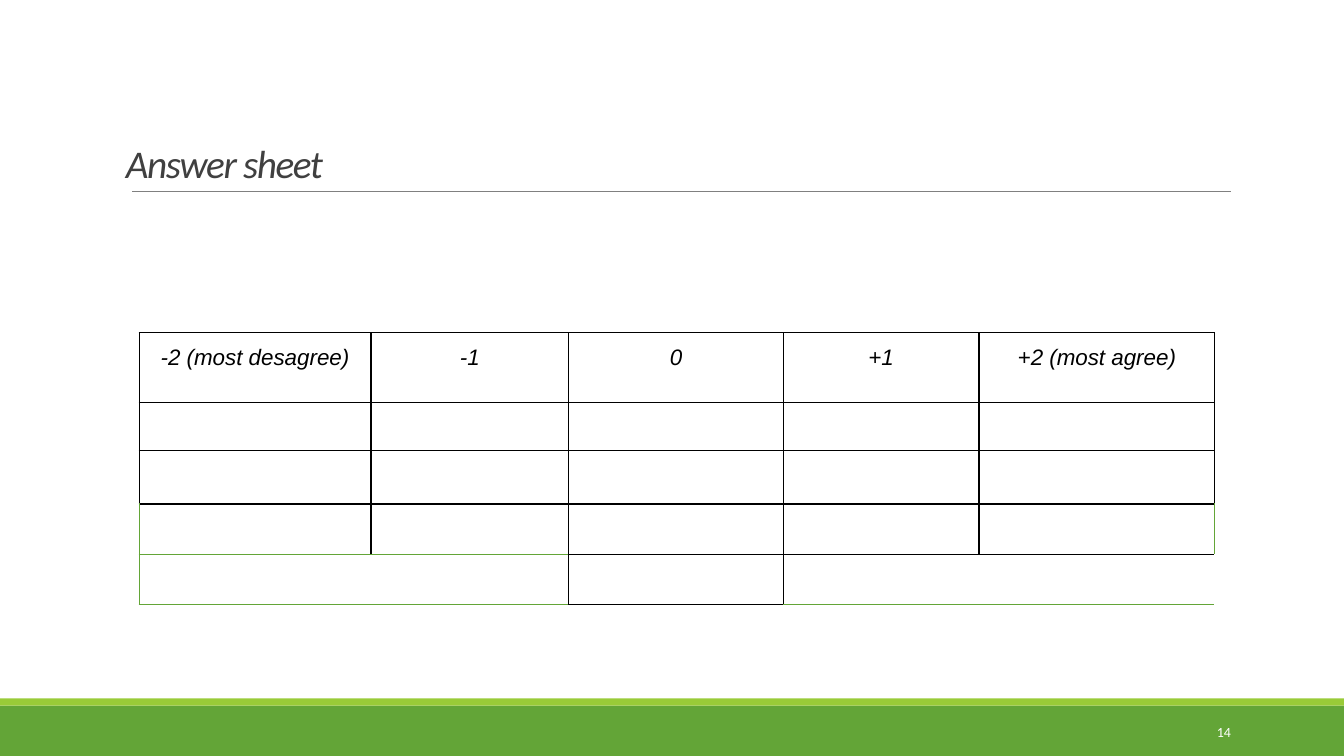
from lxml.etree import SubElement
from pptx import Presentation
from pptx.dml.color import RGBColor
from pptx.enum.shapes import MSO_CONNECTOR, MSO_SHAPE
from pptx.enum.text import MSO_ANCHOR, PP_ALIGN
from pptx.oxml.ns import qn
from pptx.util import Inches, Pt

TITLE = "Answer sheet"
PAGE = "14"
SCALE = ["-2 (most desagree)", "-1", "0", "+1", "+2 (most agree)"]
COL_WIDTHS = [2.3, 1.96, 2.13, 1.94, 2.34]
ROW_HEIGHTS = [0.69, 0.48, 0.53, 0.5, 0.5]
MERGES = [(0, 1), (3, 4)]  # column pairs joined in the last row

WIDTH, HEIGHT = 13.33, 7.5
BAND, STRIPE = 0.5, 0.07
GREEN = RGBColor(0x63, 0xA5, 0x37)
LIME = RGBColor(0x99, 0xCB, 0x38)
GREY = RGBColor(0x80, 0x80, 0x80)
DARK = RGBColor(0x40, 0x40, 0x40)
BLACK = RGBColor(0, 0, 0)
WHITE = RGBColor(0xFF, 0xFF, 0xFF)


def write(tf, text, size, color, font="Calibri", italic=False,
          align=PP_ALIGN.LEFT, line=1.0, spacing=0):
    p = tf.paragraphs[0]
    p.alignment, p.line_spacing = align, line
    r = p.add_run()
    r.text = text
    r.font.name, r.font.size, r.font.italic = font, Pt(size), italic
    r.font.color.rgb = color
    if spacing:
        r.font._element.set("spc", str(int(spacing * 100)))


def add_text(slide, box, text, anchor, wrap=True, **fmt):
    tf = slide.shapes.add_textbox(*map(Inches, box)).text_frame
    tf.word_wrap, tf.vertical_anchor = wrap, anchor
    tf.margin_left = tf.margin_right = tf.margin_top = tf.margin_bottom = Inches(0.05)
    write(tf, text, **fmt)


def add_band(slide, top, height, color):
    sp = slide.shapes.add_shape(MSO_SHAPE.RECTANGLE, 0, Inches(top),
                                Inches(WIDTH), Inches(height))
    sp.shadow.inherit = False
    sp.fill.solid()
    sp.fill.fore_color.rgb = color
    sp.line.fill.background()


def set_border(cell, side, color):
    ln = SubElement(cell._tc.get_or_add_tcPr(), qn(f"a:ln{side}"), w=str(Pt(1)))
    fill = SubElement(ln, qn("a:solidFill"))
    SubElement(fill, qn("a:srgbClr"), val=str(color))


def edge_colors(row, col):
    """Green outlines the two lower rows, except around the middle column."""
    last_row, last_col = len(ROW_HEIGHTS) - 1, len(COL_WIDTHS) - 1
    lower = row >= last_row - 1
    left_pair = col in MERGES[0]
    green = {
        "L": lower and col == 0,
        "R": lower and col == last_col,
        "T": row == last_row and left_pair,
        "B": (row == last_row and col != 2) or (row == last_row - 1 and left_pair),
    }
    return {side: GREEN if on else BLACK for side, on in green.items()}


def add_answer_table(slide, left, top):
    rows, cols = len(ROW_HEIGHTS), len(COL_WIDTHS)
    frame = slide.shapes.add_table(rows, cols, Inches(left), Inches(top),
                                   Inches(sum(COL_WIDTHS)), Inches(sum(ROW_HEIGHTS)))
    table = frame.table
    table.first_row = table.horz_banding = False
    for column, width in zip(table.columns, COL_WIDTHS):
        column.width = Inches(width)
    for row, height in zip(table.rows, ROW_HEIGHTS):
        row.height = Inches(height)
    for first, last in MERGES:
        table.cell(rows - 1, first).merge(table.cell(rows - 1, last))

    inner = {(first, "R") for first, _ in MERGES} | {(last, "L") for _, last in MERGES}
    for row in range(rows):
        for col in range(cols):
            cell = table.cell(row, col)
            for side, color in edge_colors(row, col).items():
                if row < rows - 1 or (col, side) not in inner:
                    set_border(cell, side, color)
            cell.fill.background()
    for col, label in enumerate(SCALE):
        cell = table.cell(0, col)
        cell.margin_left = cell.margin_right = cell.margin_top = cell.margin_bottom = 0
        write(cell.text_frame, label, size=16, color=BLACK, font="Arial",
              italic=True, align=PP_ALIGN.CENTER, line=1.5)


def main():
    prs = Presentation()
    prs.slide_width, prs.slide_height = Inches(WIDTH), Inches(HEIGHT)
    slide = prs.slides.add_slide(prs.slide_layouts[6])

    add_band(slide, HEIGHT - BAND, BAND, GREEN)
    add_band(slide, HEIGHT - BAND - STRIPE, STRIPE, LIME)
    rule = slide.shapes.add_connector(MSO_CONNECTOR.STRAIGHT, Inches(1.31), Inches(1.9),
                                      Inches(12.21), Inches(1.9))
    rule.line.color.rgb, rule.line.width = GREY, Pt(0.5)
    SubElement(rule._element.spPr, qn("a:effectLst"))

    add_text(slide, (1.2, 0.31, 11, 1.59), TITLE, MSO_ANCHOR.BOTTOM, size=28,
             color=DARK, italic=True, line=0.85, spacing=-1)
    add_text(slide, (12, 7.14, 0.26, 0.25), PAGE, MSO_ANCHOR.MIDDLE, wrap=False,
             size=10, color=WHITE, align=PP_ALIGN.RIGHT)
    add_answer_table(slide, 1.38, 3.3)
    prs.save("out.pptx")


if __name__ == "__main__":
    main()
